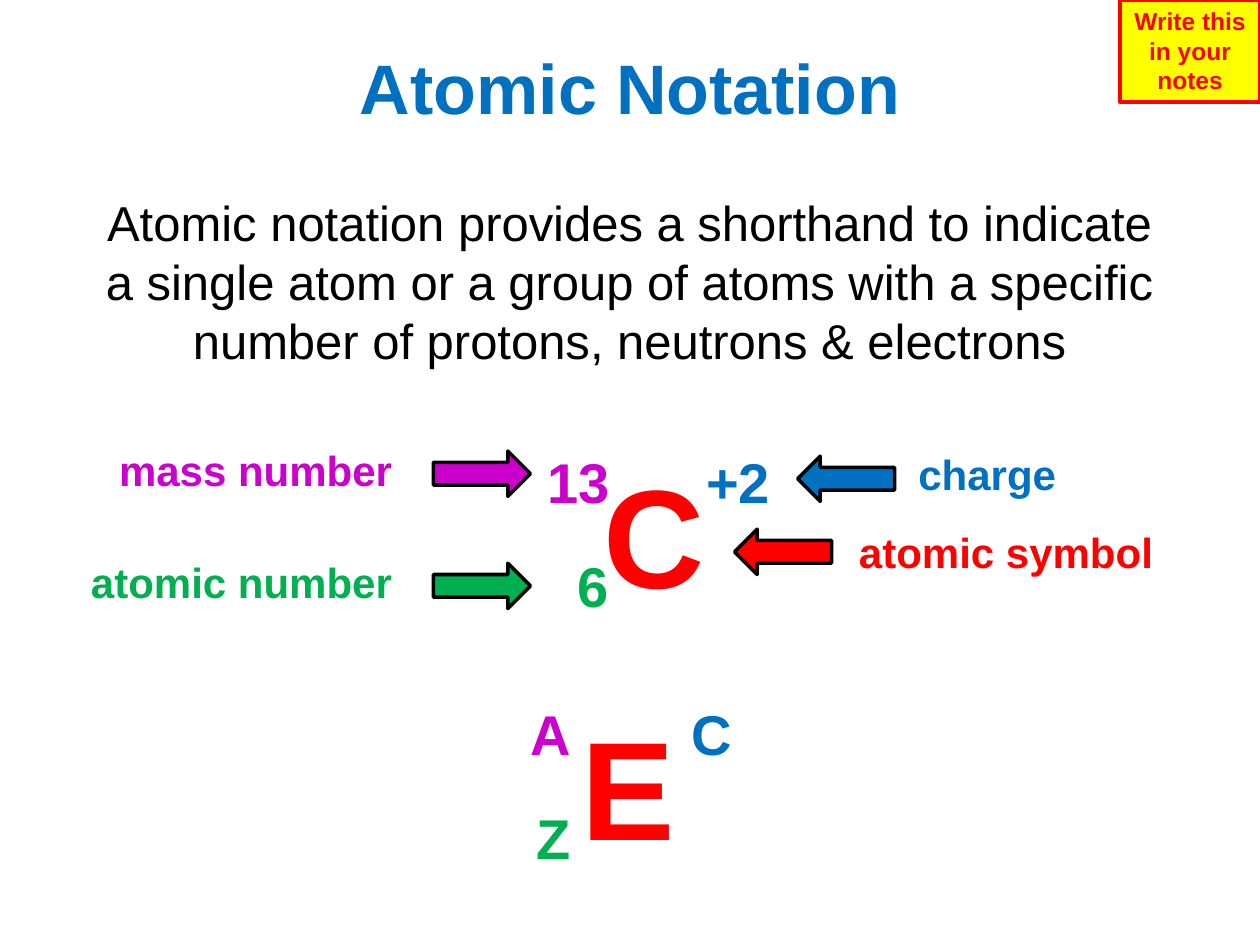
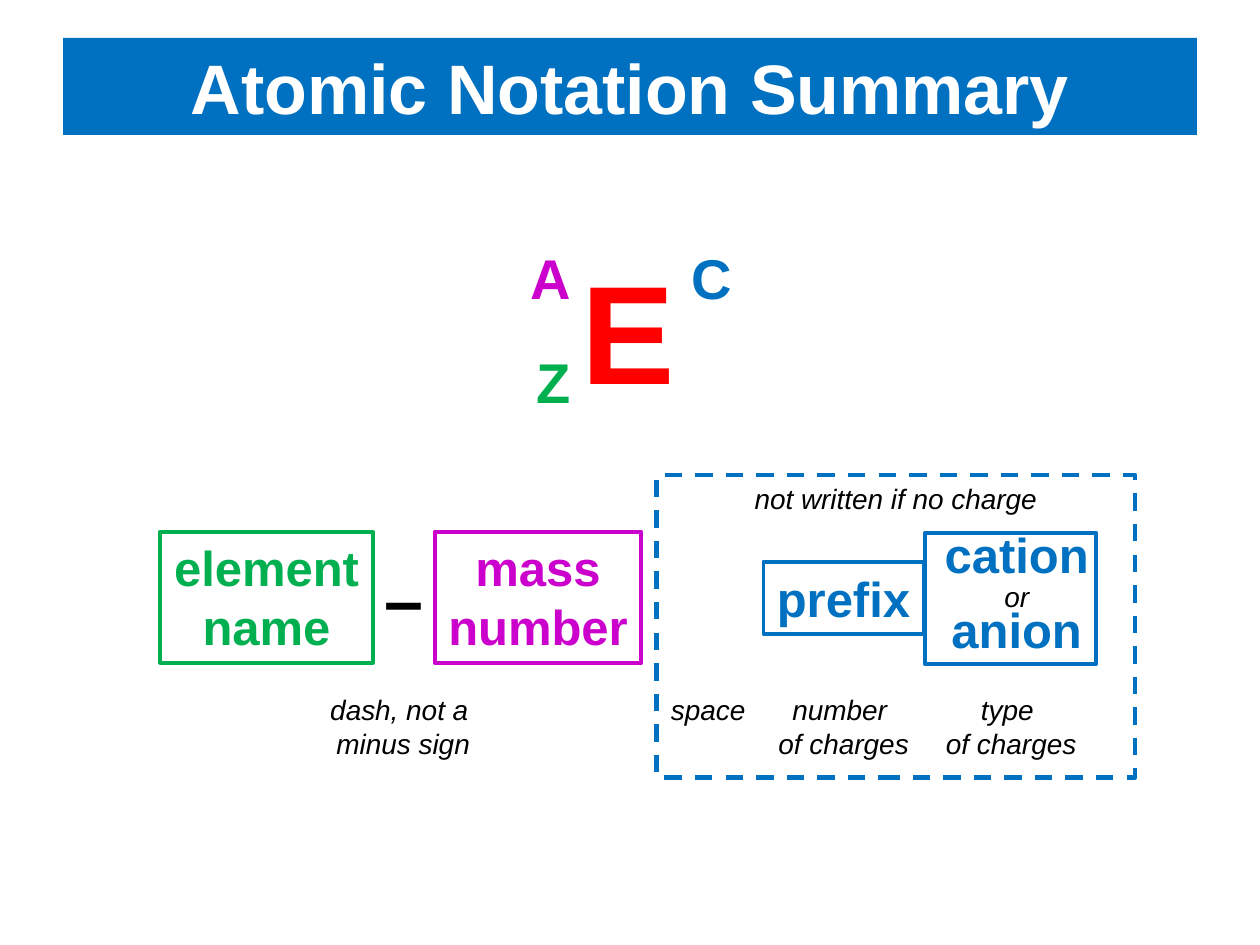
import pptx
import pptx.dml.color
import pptx.enum.dml
import pptx.enum.shapes
import pptx.enum.text
import pptx.oxml
import pptx.util

PX = 9144  # 100 px to the inch
FONT = "Arial"
COLORS = {
    "mass": "CC00CC", "atomic": "00B050", "charge": "0070C0", "symbol": "FF0000",
    "black": "000000", "white": "FFFFFF", "note": "FFFF00",
}
ALIGN = pptx.enum.text.PP_ALIGN
ANCHOR = pptx.enum.text.MSO_ANCHOR
AUTO_SIZE = pptx.enum.text.MSO_AUTO_SIZE
SHAPE = pptx.enum.shapes.MSO_SHAPE

# Content: boxes are (left, top, width, height)
TITLE_BOX = (50, 30, 900, 77)
BODY_BOX = (67, 148, 865, 160)
BODY = ("Atomic notation provides a shorthand to indicate a single atom or a group of atoms "
        "with a specific number of protons, neutrons & electrons")
NOTE_BOX = (889, 0, 111, 81)

# Notation part: (text, left, width)
CARBON = {"mass": ("13", 424, 70), "atomic": ("6", 448, 45),
          "symbol": ("C", 469, 101), "charge": ("+2", 550, 71)}
GENERAL = {"mass": ("A", 410, 53), "atomic": ("Z", 415, 48),
           "symbol": ("E", 452, 95), "charge": ("C", 538, 53)}
# Offset from the top of the notation, height, text size
NOTATION_ROWS = {"mass": (0, 64, 32), "atomic": (83, 64, 32),
                 "symbol": (1, 145, 80), "charge": (0, 64, 32)}

# Label: (text, colour, left, top, width, arrow shape, arrow left, arrow top)
LABELS = [
    ("mass number", "mass", 82, 348, 239, SHAPE.RIGHT_ARROW, 344, 358),
    ("atomic number", "atomic", 60, 437, 261, SHAPE.RIGHT_ARROW, 344, 447),
    ("charge", "charge", 719, 351, 131, SHAPE.LEFT_ARROW, 633, 362),
    ("atomic symbol", "symbol", 669, 413, 256, SHAPE.LEFT_ARROW, 583, 420),
]

# Name part: (lines, colour, box)
NAME_PARTS = [
    (["element", "name"], "atomic", (127, 422, 169, 104)),
    (["mass", "number"], "mass", (345, 422, 164, 104)),
    (["prefix"], "charge", (606, 446, 127, 57)),
]
ION_LINES = ["cation", "or", "anion"]
ION_BOX = (734, 423, 136, 104)
DASH_BOX = (295, 436, 51, 77)
CHARGE_FRAME = (521, 377, 380, 240)

# Caption: (lines, left, width, height)
CAPTION_TOP = 545
CAPTIONS = [
    (["dash, not a ", "minus sign"], 251, 138, 64),
    (["space"], 522, 80, 37),
    (["number ", "of charges"], 607, 125, 64),
    (["type ", "of charges"], 740, 125, 64),
]


def rgb(name):
    return pptx.dml.color.RGBColor.from_string(COLORS[name])


def emu(box):
    return [value * PX for value in box]


def format_paragraph(paragraph, size, color, bold=False, italic=False, align=ALIGN.CENTER):
    paragraph.alignment = align
    for run in paragraph.runs:
        font = run.font
        font.name, font.size = FONT, pptx.util.Pt(size)
        font.bold, font.italic = bold, italic
        font.color.rgb = rgb(color)


def write(shape, lines, size, color, wrap=False, **style):
    frame = shape.text_frame
    frame.text = "\n".join(lines)
    frame.word_wrap = wrap
    frame.vertical_anchor = ANCHOR.TOP
    for paragraph in frame.paragraphs:
        format_paragraph(paragraph, size, color, **style)


def add_text(slide, box, lines, size, color, **style):
    shape = slide.shapes.add_textbox(*emu(box))
    write(shape, lines, size, color, **style)
    shape.text_frame.auto_size = AUTO_SIZE.SHAPE_TO_FIT_TEXT


def add_shape(slide, kind, box, line, width, fill=None):
    shape = slide.shapes.add_shape(kind, *emu(box))
    shape.shadow.inherit = False
    if fill:
        shape.fill.solid()
        shape.fill.fore_color.rgb = rgb(fill)
    else:
        shape.fill.background()
    shape.line.color.rgb = rgb(line)
    shape.line.width = pptx.util.Pt(width)
    return shape


def fill_placeholder(shape, box, text, size, color, **style):
    shape.left, shape.top, shape.width, shape.height = emu(box)
    write(shape, [text], size, color, wrap=True, **style)
    shape.text_frame.auto_size = AUTO_SIZE.NONE


def add_slide(presentation, layout, title, color):
    slide = presentation.slides.add_slide(presentation.slide_layouts[layout])
    shape = slide.shapes.title
    fill_placeholder(shape, TITLE_BOX, title, 40, color, bold=True)
    shape.text_frame.vertical_anchor = ANCHOR.MIDDLE
    return slide


def add_notation(slide, top, parts):
    for color, (text, left, width) in parts.items():
        offset, height, size = NOTATION_ROWS[color]
        align = ALIGN.LEFT if color == "symbol" else ALIGN.RIGHT
        add_text(slide, (left, top + offset, width, height), [text], size, color,
                 bold=True, align=align)


def build_notation_slide(presentation):
    slide = add_slide(presentation, 1, "Atomic Notation", "charge")

    # Definition, without a bullet
    body = slide.placeholders[1]
    fill_placeholder(body, BODY_BOX, BODY, 28, "black")
    properties = body.text_frame.paragraphs[0]._p.get_or_add_pPr()
    properties.set("marL", "0")
    properties.set("indent", "0")
    properties.append(pptx.oxml.parse_xml(
        '<a:buNone xmlns:a="http://schemas.openxmlformats.org/drawingml/2006/main"/>'))

    # Labels and arrows around the example
    for text, color, left, top, width, arrow, arrow_left, arrow_top in LABELS:
        align = ALIGN.LEFT if color == "charge" else ALIGN.RIGHT
        add_text(slide, (left, top, width, 50), [text], 24, color, bold=True, align=align)
        add_shape(slide, arrow, (arrow_left, arrow_top, 77, 36), "black", 2, fill=color)
    add_notation(slide, 350, CARBON)
    add_notation(slide, 550, GENERAL)

    # Reminder in the corner
    note = add_shape(slide, SHAPE.RECTANGLE, NOTE_BOX, "symbol", 2.25, fill="note")
    write(note, ["Write this in your notes"], 14, "symbol", wrap=True, bold=True)


def build_summary_slide(presentation):
    slide = add_slide(presentation, 5, "Atomic Notation Summary", "white")
    slide.shapes.title.fill.solid()
    slide.shapes.title.fill.fore_color.rgb = rgb("charge")
    add_notation(slide, 188, GENERAL)

    # Parts of the name
    for lines, color, box in NAME_PARTS:
        part = add_shape(slide, SHAPE.RECTANGLE, box, color, 2.25)
        write(part, lines, 28, color, bold=True)
    add_text(slide, DASH_BOX, ["–"], 40, "black", bold=True)

    # Kind of ion, with tight lines
    ion = add_shape(slide, SHAPE.RECTANGLE, ION_BOX, "charge", 2.25)
    write(ion, ION_LINES, 28, "charge", bold=True)
    frame = ion.text_frame
    frame.vertical_anchor = ANCHOR.MIDDLE
    frame.margin_left = 10 * PX
    frame.margin_top = frame.margin_right = frame.margin_bottom = 0
    for paragraph, spacing in zip(frame.paragraphs, (26, 17, 26)):
        paragraph.line_spacing = pptx.util.Pt(spacing)
    format_paragraph(frame.paragraphs[1], 16, "black", italic=True)

    # Captions and the frame around the charge
    for lines, left, width, height in CAPTIONS:
        add_text(slide, (left, CAPTION_TOP, width, height), lines, 16, "black", italic=True)
    charge = add_shape(slide, SHAPE.RECTANGLE, CHARGE_FRAME, "charge", 2.5)
    charge.line.dash_style = pptx.enum.dml.MSO_LINE.DASH
    write(charge, ["not written if no charge"], 16, "black", italic=True)


def main():
    presentation = pptx.Presentation()
    presentation.slide_width, presentation.slide_height = emu((1000, 750))
    build_notation_slide(presentation)
    build_summary_slide(presentation)
    presentation.save("out.pptx")


if __name__ == "__main__":
    main()
